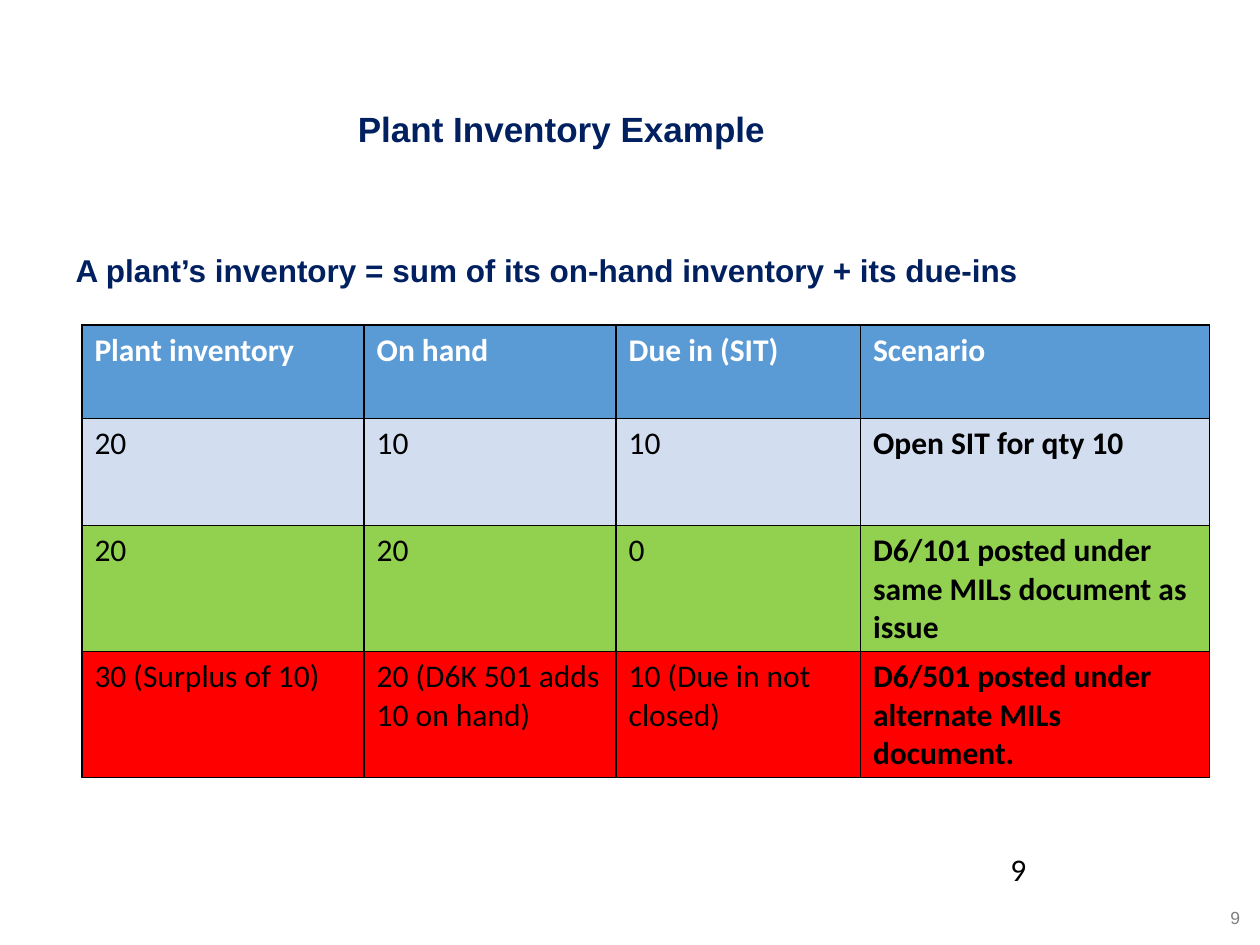
"""Build the plant inventory example slide."""
from dataclasses import dataclass

from lxml.etree import SubElement
from pptx import Presentation
from pptx.dml.color import RGBColor as RGB
from pptx.enum.text import MSO_ANCHOR as Anchor, PP_ALIGN as Align
from pptx.oxml.ns import qn
from pptx.util import Emu, Pt

PX = 9144


@dataclass(frozen=True)
class Theme:
    navy: str = "002060"
    black: str = "000000"
    white: str = "FFFFFF"
    grey: str = "7F7F7F"
    row_fills: tuple = ("5B9BD5", "D2DEEF", "92D050", "FF0000")
    head_font: str = "Arial"
    table_font: str = "Calibri"
    title_size: int = 20
    body_size: int = 18
    footer_size: int = 10


T = Theme()
COLUMNS = (224, 200, 194, 277)
ROWS = (74, 85, 100, 100)
INVENTORY = (
    ("Plant inventory", "On hand", "Due in (SIT)", "Scenario"),
    ("20", "10", "10", "Open SIT for qty 10"),
    ("20", "20", "0", "D6/101 posted under same MILs document as issue"),
    ("30 (Surplus of 10)", "20 (D6K 501 adds 10 on hand)",
     "10 (Due in not closed)", "D6/501 posted under alternate MILs document."),
)


def px(n):
    return Emu(n * PX)


def apply(obj, values):
    for name, value in values.items():
        setattr(obj, name, value)


def write(tf, text, font, size, color, bold=False, **para):
    p = tf.paragraphs[0]
    apply(p, para)
    r = p.add_run()
    r.text = text
    apply(r.font, {"name": font, "size": Pt(size), "bold": bold})
    r.font.color.rgb = RGB.from_string(color)


def add_title(slide, text, box):
    sp = slide.shapes.title
    apply(sp, dict(zip(("left", "top", "width", "height"), map(px, box))))
    apply(sp.text_frame, {
        "margin_left": 0, "margin_right": 0, "margin_top": 0,
        "margin_bottom": px(5), "vertical_anchor": Anchor.BOTTOM, "word_wrap": True,
    })
    write(sp.text_frame, text, T.head_font, T.title_size, T.navy, True,
          alignment=Align.LEFT, line_spacing=Pt(18))


def add_text(slide, text, box, style, frame=None, **para):
    tf = slide.shapes.add_textbox(*map(px, box)).text_frame
    apply(tf, {"word_wrap": True, **(frame or {})})
    write(tf, text, *style, **para)


def set_borders(cell):
    tc_pr = cell._tc.get_or_add_tcPr()
    for side in ("lnL", "lnR", "lnT", "lnB"):
        ln = SubElement(tc_pr, qn(f"a:{side}"), w=str(Pt(1)))
        fill = SubElement(ln, qn("a:solidFill"))
        SubElement(fill, qn("a:srgbClr"), val=T.black)


def add_inventory_table(slide, left, top):
    table = slide.shapes.add_table(
        len(ROWS), len(COLUMNS), px(left), px(top), px(sum(COLUMNS)), px(sum(ROWS))).table
    for column, width in zip(table.columns, COLUMNS):
        column.width = px(width)
    for i, (row, height) in enumerate(zip(table.rows, ROWS)):
        row.height = px(height)
        for j, cell in enumerate(row.cells):
            set_borders(cell)
            cell.fill.solid()
            cell.fill.fore_color.rgb = RGB.from_string(T.row_fills[i])
            write(cell.text_frame, INVENTORY[i][j], T.table_font, T.body_size,
                  T.white if i == 0 else T.black, i == 0 or j == len(COLUMNS) - 1)


def main():
    prs = Presentation()
    apply(prs, {"slide_width": px(1000), "slide_height": px(750)})
    slide = prs.slides.add_slide(prs.slide_layouts[5])
    add_text(slide, "9", (944, 715, 50, 27), (T.head_font, T.footer_size, T.grey),
             alignment=Align.RIGHT)
    add_text(slide, "A plant’s inventory = sum of its on-hand inventory + its due-ins",
             (0, 157, 1000, 494), (T.head_font, T.body_size, T.navy, True),
             {"margin_left": px(60), "margin_top": px(42)})
    add_text(slide, "9", (792, 670, 208, 50), (T.table_font, T.body_size, T.black))
    add_inventory_table(slide, 65, 258)
    add_title(slide, "Plant Inventory Example", (284, 84, 691, 40))
    prs.save("out.pptx")


if __name__ == "__main__":
    main()
